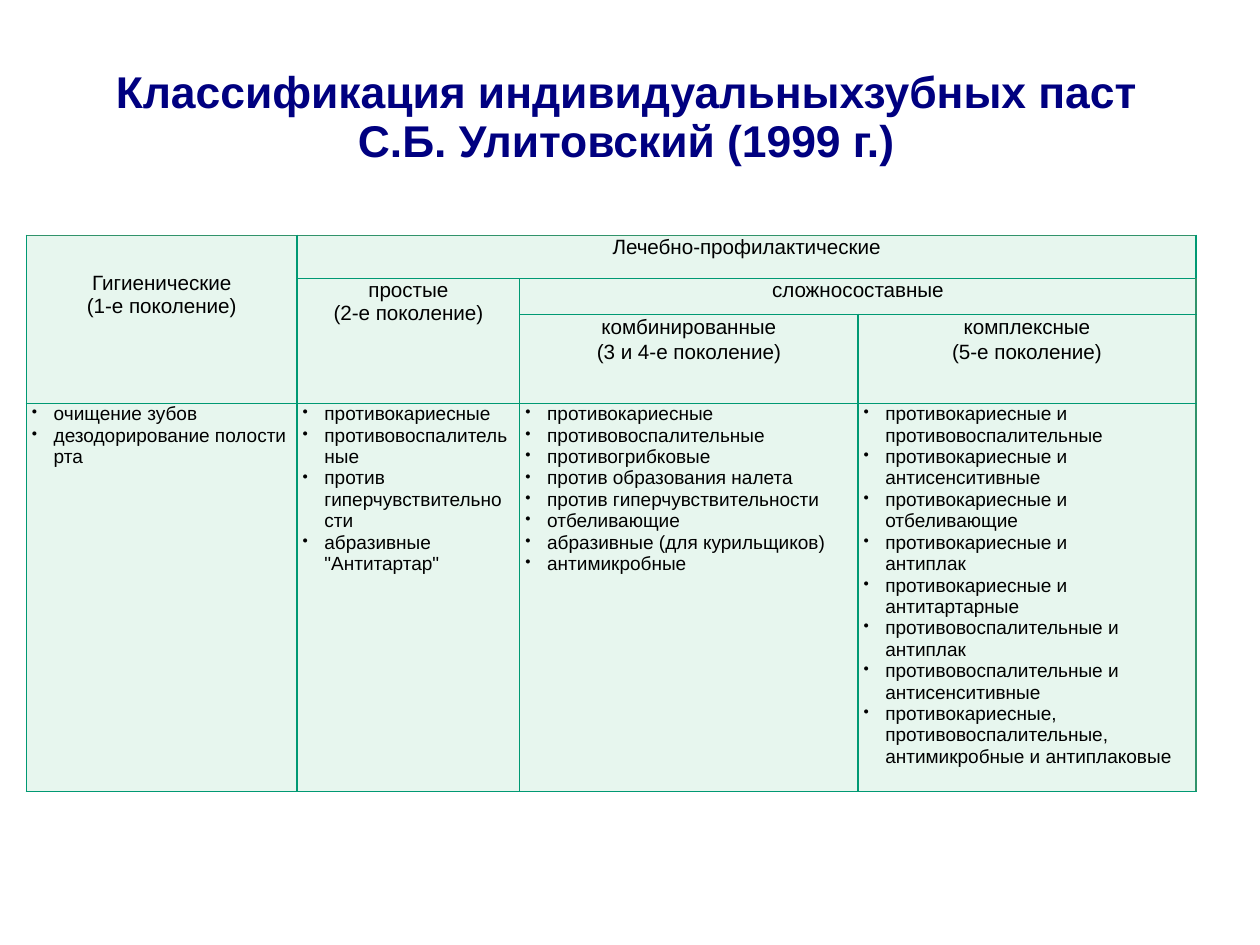
from lxml import etree
from pptx import Presentation
from pptx.dml.color import RGBColor
from pptx.enum.text import MSO_ANCHOR, MSO_AUTO_SIZE, PP_ALIGN
from pptx.oxml.ns import qn
from pptx.util import Inches, Pt

CENTER, LEFT, TOP = PP_ALIGN.CENTER, PP_ALIGN.LEFT, MSO_ANCHOR.TOP
NAVY = RGBColor(0x00, 0x00, 0x80)
BLACK = RGBColor(0x00, 0x00, 0x00)
MINT = RGBColor(0xE7, 0xF6, 0xEE)
GREEN = RGBColor(0x00, 0x99, 0x73)
DARK_GREEN = RGBColor(0x31, 0x93, 0x6A)
FONT = "Arial"
TITLE_ONLY = 5

TITLE = "Классификация индивидуальныхзубных паст\nС.Б. Улитовский (1999 г.)"
COLUMNS = (2.37, 1.95, 2.96, 2.96)
ROWS = (0.38, 0.31, 0.78, 3.4)

# row, column, rows spanned, columns spanned, text, top margin, line spacing
HEADINGS = (
    (0, 0, 3, 1, "Гигиенические\n(1-е поколение)", 0.32, 1.0),
    (0, 1, 1, 3, "Лечебно-профилактические", 0, 1.0),
    (1, 1, 2, 1, "простые\n(2-е поколение)", 0, 1.0),
    (1, 2, 1, 2, "сложносоставные", 0, 1.0),
    (2, 2, 1, 1, "комбинированные\n(3 и 4-е поколение)", 0, Pt(15.6)),
    (2, 3, 1, 1, "комплексные\n(5-е поколение)", 0, Pt(15.6)),
)
PROPERTIES = (
    ("очищение зубов", "дезодорирование полости\nрта"),
    ("противокариесные", "противовоспалитель\nные",
     "против\nгиперчувствительно\nсти", "абразивные\n\"Антитартар\""),
    ("противокариесные", "противовоспалительные", "противогрибковые",
     "против образования налета", "против гиперчувствительности",
     "отбеливающие", "абразивные (для курильщиков)", "антимикробные"),
    ("противокариесные и\nпротивовоспалительные",
     "противокариесные и\nантисенситивные",
     "противокариесные и\nотбеливающие",
     "противокариесные и\nантиплак",
     "противокариесные и\nантитартарные",
     "противовоспалительные и\nантиплак",
     "противовоспалительные и\nантисенситивные",
     "противокариесные,\nпротивовоспалительные,\nантимикробные и антиплаковые"),
)


def add_lines(para, text, size, color, align, spacing, bold=False):
    """Write text run by run, with a line break between its lines."""
    para.alignment = align
    para.line_spacing = spacing
    para.space_before = Pt(0)
    for index, line in enumerate(text.split("\n")):
        if index:
            para.add_line_break()
        span = para.add_run()
        span.text = line
        span.font.name = FONT
        span.font.size = Pt(size)
        span.font.bold = bold
        span.font.color.rgb = color


def add_bullet(para):
    properties = para._p.get_or_add_pPr()
    properties.set("marL", str(Inches(0.24)))
    properties.set("indent", str(Inches(-0.19)))
    etree.SubElement(properties, qn("a:buSzPct")).set("val", "83000")
    etree.SubElement(properties, qn("a:buChar")).set("char", "•")


def format_cell(cell, top_color, right_color, margin_top=0):
    """Set the margins, borders and fill of a cell."""
    cell.margin_left = cell.margin_right = cell.margin_bottom = 0
    cell.margin_top = Inches(margin_top)
    cell.vertical_anchor = TOP
    properties = cell._tc.get_or_add_tcPr()
    sides = (("L", GREEN), ("R", right_color), ("T", top_color), ("B", GREEN))
    for side, color in sides:
        line = etree.SubElement(properties, qn("a:ln" + side))
        line.set("w", str(Pt(1)))
        fill = etree.SubElement(line, qn("a:solidFill"))
        etree.SubElement(fill, qn("a:srgbClr")).set("val", str(color))
    cell.fill.solid()
    cell.fill.fore_color.rgb = MINT


def place_title(page, left, top, width, height):
    title = page.shapes.title
    title.left, title.top, title.width, title.height = map(
        Inches, (left, top, width, height))
    frame = title.text_frame
    frame.word_wrap = True
    frame.auto_size = MSO_AUTO_SIZE.NONE
    frame.vertical_anchor = TOP
    frame.margin_left = frame.margin_right = frame.margin_bottom = 0
    frame.margin_top = Inches(0.17)
    add_lines(frame.paragraphs[0], TITLE, 28, NAVY, CENTER, Pt(31.3), True)


def add_classification(page, left, top):
    frame = page.shapes.add_table(
        len(ROWS), len(COLUMNS), Inches(left), Inches(top),
        Inches(sum(COLUMNS)), Inches(sum(ROWS)))
    table = frame.table
    table.first_row = table.horz_banding = False
    for column, width in zip(table.columns, COLUMNS):
        column.width = Inches(width)
    for row, height in zip(table.rows, ROWS):
        row.height = Inches(height)

    last_column = len(COLUMNS) - 1
    for row, column, tall, wide, text, margin, spacing in HEADINGS:
        cell = table.cell(row, column)
        if tall * wide > 1:
            cell.merge(table.cell(row + tall - 1, column + wide - 1))
        at_right = row and column + wide - 1 == last_column
        format_cell(cell, GREEN if row else DARK_GREEN,
                    DARK_GREEN if at_right else GREEN, margin)
        add_lines(cell.text_frame.paragraphs[0], text, 13, BLACK,
                  CENTER, spacing)

    for column, items in enumerate(PROPERTIES):
        cell = table.cell(len(ROWS) - 1, column)
        format_cell(cell, GREEN,
                    DARK_GREEN if column == last_column else GREEN)
        for index, item in enumerate(items):
            text_frame = cell.text_frame
            para = text_frame.add_paragraph() if index else text_frame.paragraphs[0]
            add_bullet(para)
            add_lines(para, item, 12, BLACK, LEFT, Pt(13.5))


def main():
    deck = Presentation()
    deck.slide_width, deck.slide_height = Inches(11.03), Inches(8.27)
    page = deck.slides.add_slide(deck.slide_layouts[TITLE_ONLY])
    place_title(page, 0.62, 0.42, 9.72, 1.17)
    add_classification(page, 0.23, 2.06)
    deck.save("out.pptx")


if __name__ == "__main__":
    main()
